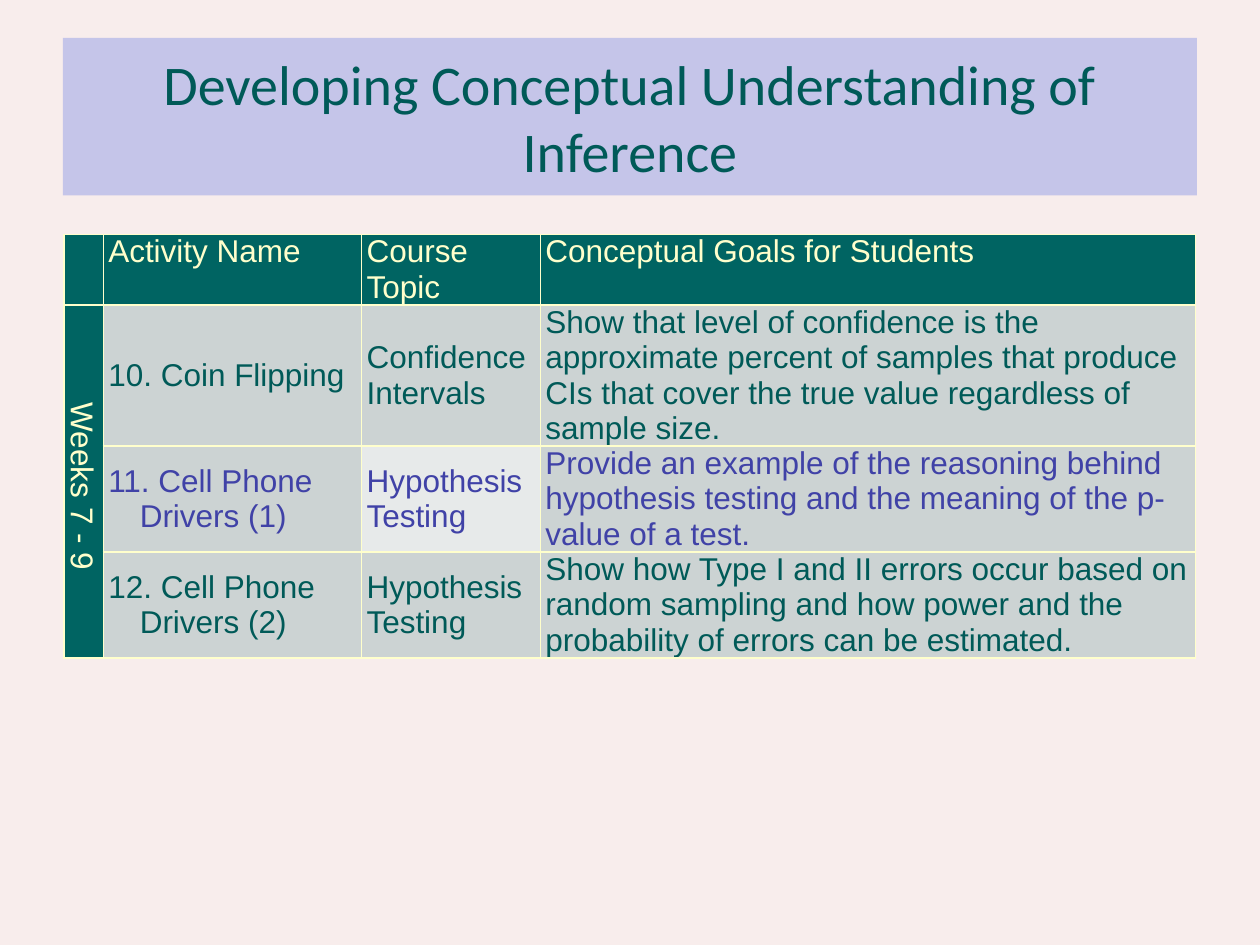
import pptx
import pptx.dml.color
import pptx.enum.shapes
import pptx.enum.text
import pptx.oxml
import pptx.oxml.ns
import pptx.util
from pptx.util import Inches

ANCHOR = pptx.enum.text.MSO_ANCHOR
CENTER = pptx.enum.text.PP_ALIGN.CENTER
DARK_TEAL, TEAL, CREAM, INDIGO = "005A58", "006462", "FFFFCC", "4042A7"
GRAY, PALE_GRAY = "CCD3D3", "E7EAEA"

COLUMN_WIDTHS = [0.31, 2.05, 1.42, 5.2]
ROW_HEIGHTS = [0.56, 1.12, 0.84, 0.84]
HEADINGS = ["", "Activity Name", "Course Topic", "Conceptual Goals for Students"]
# Activity, hanging indent, topic, topic fill, goal, text colour
ACTIVITIES = [
    ("10. Coin Flipping", 0.12, "Confidence Intervals", GRAY,
     "Show that level of confidence is the approximate percent of samples that "
     "produce CIs that cover the true value regardless of sample size.", DARK_TEAL),
    ("11. Cell Phone Drivers (1)", 0.25, "Hypothesis Testing", PALE_GRAY,
     "Provide an example of the reasoning behind hypothesis testing and the "
     "meaning of the p-value of a test.", INDIGO),
    ("12. Cell Phone Drivers (2)", 0.25, "Hypothesis Testing", GRAY,
     "Show how Type I and II errors occur based on random sampling and how power "
     "and the probability of errors can be estimated.", DARK_TEAL),
]


def rgb(value):
    return pptx.dml.color.RGBColor.from_string(value)


def paint(fill, color):
    fill.solid()
    fill.fore_color.rgb = rgb(color)


def style_font(paragraph, name, size, color):
    paragraph.font.name = name
    paragraph.font.size = pptx.util.Pt(size)
    paragraph.font.color.rgb = rgb(color)


def set_indent(paragraph, left, first):
    properties = paragraph._p.get_or_add_pPr()
    properties.set("marL", str(Inches(left)))
    properties.set("indent", str(Inches(first)))


def add_borders(cell, color):
    """Must run before the fill is set: the schema puts borders first."""
    for side in ("lnL", "lnR", "lnT", "lnB"):
        cell._tc.get_or_add_tcPr().append(pptx.oxml.parse_xml(
            f'<a:{side} {pptx.oxml.ns.nsdecls("a")} w="12700"><a:solidFill>'
            f'<a:srgbClr val="{color}"/></a:solidFill></a:{side}>'))


def fill_cell(cell, text, fill, color, anchor):
    add_borders(cell, CREAM)
    paint(cell.fill, fill)
    cell.margin_left = cell.margin_right = Inches(0.04)
    cell.margin_top = cell.margin_bottom = 0
    cell.vertical_anchor = anchor
    cell.text = text
    paragraph = cell.text_frame.paragraphs[0]
    style_font(paragraph, "Arial", 18, color)
    return paragraph


def add_title(slide, text):
    title = slide.shapes.add_shape(
        pptx.enum.shapes.MSO_SHAPE.RECTANGLE,
        Inches(0.5), Inches(0.3), Inches(9), Inches(1.25))
    title.shadow.inherit = False
    paint(title.fill, "C5C5E9")
    title.line.fill.background()
    title.text_frame.word_wrap = True
    title.text_frame.vertical_anchor = ANCHOR.MIDDLE
    title.text_frame.text = text
    paragraph = title.text_frame.paragraphs[0]
    paragraph.alignment = CENTER
    style_font(paragraph, "Calibri", 32, DARK_TEAL)


def add_week_label(table, text):
    for row in range(1, len(ROW_HEIGHTS)):
        label = fill_cell(table.cell(row, 0), text if row == 1 else "",
                          TEAL, CREAM, ANCHOR.MIDDLE)
        if row == 1:
            label.alignment = CENTER
            set_indent(label, 0.2, -0.12)
    weeks = table.cell(1, 0)
    weeks._tc.get_or_add_tcPr().set("vert", "vert")
    weeks.merge(table.cell(len(ROW_HEIGHTS) - 1, 0))


def add_activity_table(slide):
    table = slide.shapes.add_table(
        len(ROW_HEIGHTS), len(COLUMN_WIDTHS), Inches(0.51), Inches(1.86),
        Inches(sum(COLUMN_WIDTHS)), Inches(sum(ROW_HEIGHTS))).table
    for column, width in zip(table.columns, COLUMN_WIDTHS):
        column.width = Inches(width)
    for row, height in zip(table.rows, ROW_HEIGHTS):
        row.height = Inches(height)

    for column, heading in enumerate(HEADINGS):
        fill_cell(table.cell(0, column), heading, TEAL, CREAM, ANCHOR.TOP)
    add_week_label(table, "Weeks 7 - 9")
    for row, (activity, hang, topic, topic_fill, goal, color) in enumerate(ACTIVITIES, 1):
        name = fill_cell(table.cell(row, 1), activity, GRAY, color, ANCHOR.MIDDLE)
        set_indent(name, hang, -hang)
        fill_cell(table.cell(row, 2), topic, topic_fill, color, ANCHOR.MIDDLE)
        fill_cell(table.cell(row, 3), goal, GRAY, color, ANCHOR.BOTTOM)


def main():
    presentation = pptx.Presentation()
    presentation.slide_width = Inches(10)
    presentation.slide_height = Inches(7.5)
    slide = presentation.slides.add_slide(presentation.slide_layouts[6])
    paint(slide.background.fill, "F8EDEC")
    add_title(slide, "Developing Conceptual Understanding of Inference")
    add_activity_table(slide)
    presentation.save("out.pptx")


if __name__ == "__main__":
    main()
